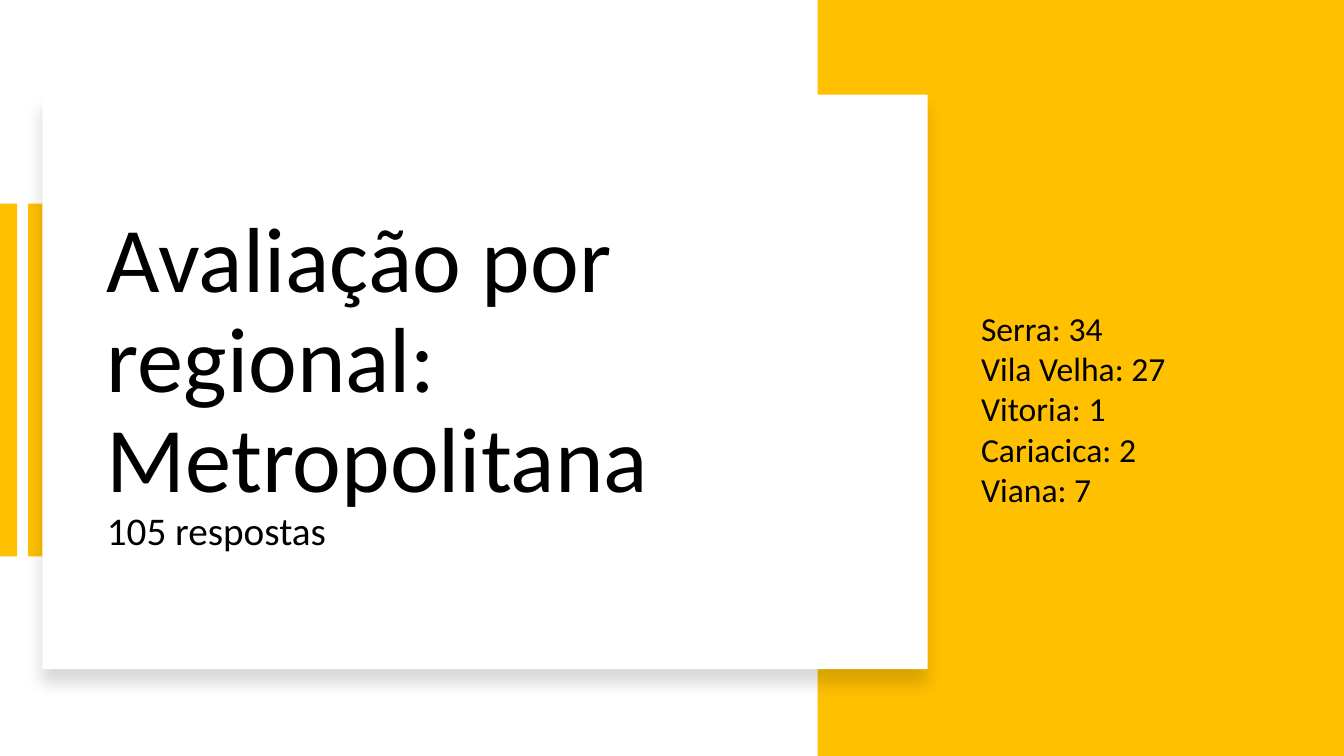
"""Build the slide with the regional survey results for Metropolitana."""
from lxml import etree
from pptx import Presentation
from pptx import util as u
from pptx.dml import color
from pptx.enum import shapes, text
from pptx.oxml import ns

THEME = {
    "font": "Calibri",
    "ink": color.RGBColor.from_string("000000"),
    "accent": color.RGBColor.from_string("FFC000"),
    "paper": color.RGBColor.from_string("FFFFFF"),
    "title": u.Pt(66),
    "subtitle": u.Pt(28),
    "list": u.Pt(24),
}


def add_panel(slide, box, fill):
    panel = slide.shapes.add_shape(shapes.MSO_SHAPE.RECTANGLE, *map(u.Inches, box))
    panel.shadow.inherit = False
    panel.fill.solid()
    panel.fill.fore_color.rgb = fill
    panel.line.fill.background()
    return panel


def style_run(run, size):
    for name, value in {"name": THEME["font"], "size": size, "bold": False}.items():
        setattr(run.font, name, value)
    run.font.color.rgb = THEME["ink"]


deck = Presentation()
deck.slide_width, deck.slide_height = u.Inches(13.33), u.Inches(7.5)
slide = deck.slides.add_slide(deck.slide_layouts[1])
heading, cities = slide.placeholders

for left in (0.28, 0):
    add_panel(slide, (left, 2.02, 0.17, 3.5), THEME["accent"])
add_panel(slide, (8.11, 0, 5.22, 7.5), THEME["accent"])
card = add_panel(slide, (0.42, 0.94, 8.78, 5.7), THEME["paper"])

effects = card._element.spPr.find(ns.qn("a:effectLst"))
glow = etree.SubElement(effects, ns.qn("a:outerShdw"), blurRad=str(u.Pt(11)),
                        dist=str(u.Pt(10)), dir="5400000", algn="t", rotWithShape="0")
tint = etree.SubElement(glow, ns.qn("a:srgbClr"), val="000000")
etree.SubElement(tint, ns.qn("a:alpha"), val="15000")

placements = (
    (heading, (0.96, 1.61, 7.77, 4.39), text.MSO_ANCHOR.MIDDLE, text.MSO_AUTO_SIZE.NONE),
    (cities, (9.63, 3, 2.55, 2.12), text.MSO_ANCHOR.TOP, text.MSO_AUTO_SIZE.SHAPE_TO_FIT_TEXT),
)
for holder, box, anchor, fit in placements:
    for name, value in zip(("left", "top", "width", "height"), box):
        setattr(holder, name, u.Inches(value))
    frame_format = {"vertical_anchor": anchor, "auto_size": fit, "word_wrap": True}
    for name, value in frame_format.items():
        setattr(holder.text_frame, name, value)
    slide.shapes._spTree.append(holder._element)

headline = heading.text_frame.paragraphs[0]
headline.alignment = text.PP_ALIGN.LEFT
headline.line_spacing = 0.9
topic = headline.add_run()
topic.text = "Avaliação por regional: Metropolitana"
style_run(topic, THEME["title"])
headline.add_line_break()
answers = headline.add_run()
answers.text = "105 respostas"
style_run(answers, THEME["subtitle"])

counts = {"Serra": 34, "Vila Velha": 27, "Vitoria": 1, "Cariacica": 2, "Viana": 7}
cities.text_frame.text = "\n".join(f"{city}: {count}" for city, count in counts.items())
for entry in cities.text_frame.paragraphs:
    entry.space_before = u.Pt(0)
    layout = entry._p.get_or_add_pPr()
    layout.set("marL", "0")
    layout.set("indent", "0")
    etree.SubElement(layout, ns.qn("a:buNone"))
    style_run(entry.runs[0], THEME["list"])

deck.save("out.pptx")
